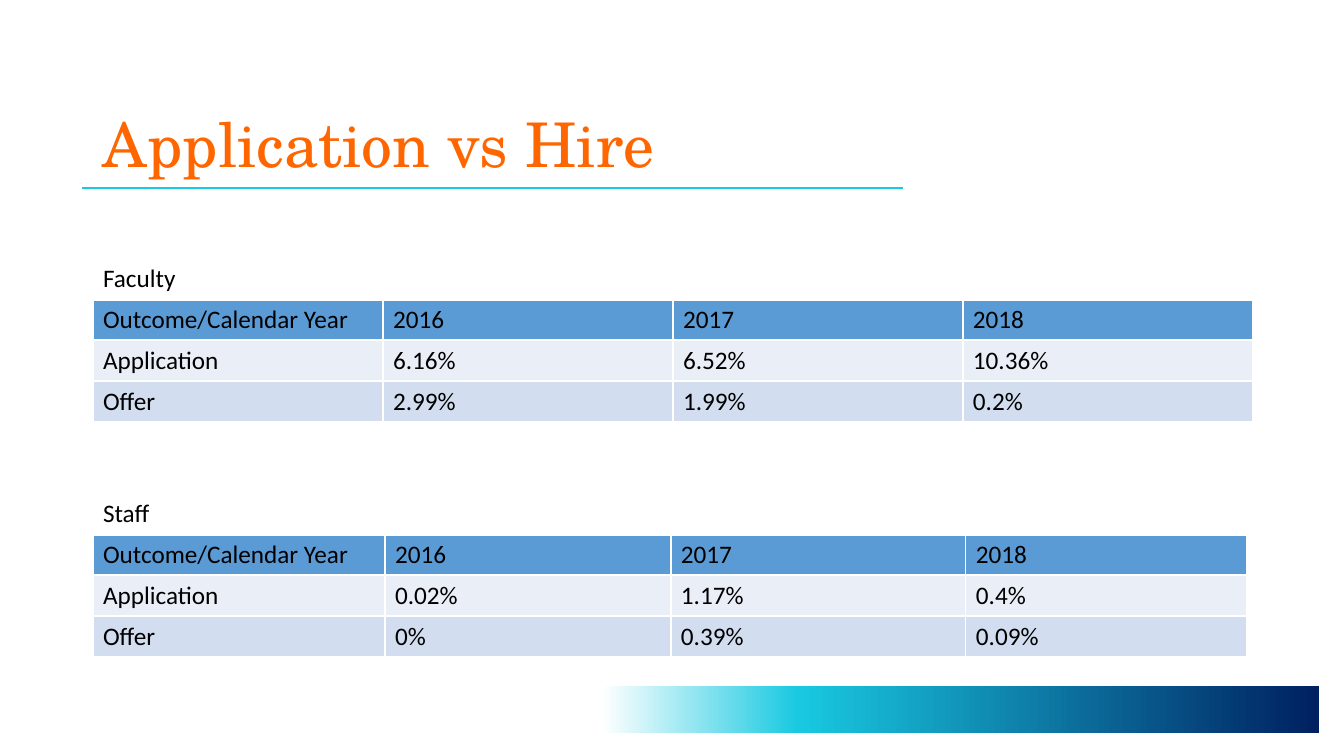
from dataclasses import dataclass

from pptx import Presentation
from pptx.dml.color import RGBColor as RGB
from pptx.enum.shapes import MSO_CONNECTOR as Conn, MSO_SHAPE as Shape
from pptx.enum.text import MSO_ANCHOR as Anchor
from pptx.oxml import parse_xml
from pptx.oxml.ns import nsdecls
from pptx.util import Pt

PX = 914400 / 100.8


def px(*sizes):
    return [round(size * PX) for size in sizes]


@dataclass(frozen=True)
class Theme:
    white: str = "FFFFFF"
    black: str = "000000"
    navy: str = "002060"
    cyan: str = "19C9E1"
    orange: str = "FF6600"
    head: str = "5B9BD5"
    light: str = "EAEFF7"
    mid: str = "D2DEEF"
    serif: str = "TeX Gyre Schola"
    sans: str = "Calibri"
    title: int = 44
    body: int = 18


class Deck:
    def __init__(self, theme):
        self.theme = theme
        self.prs = Presentation()
        self.prs.slide_width, self.prs.slide_height = px(1344, 756)
        self.slide = self.prs.slides.add_slide(self.prs.slide_layouts[6])
        self.shapes = self.slide.shapes

    def style(self, run, face, size, color):
        font = run.font
        font.name, font.size, font.bold = face, Pt(size), False
        font.color.rgb = RGB.from_string(color)

    def title(self, box, text):
        t = self.theme
        frame = self.shapes.add_textbox(*px(*box)).text_frame
        frame.word_wrap = True
        frame.vertical_anchor = Anchor.BOTTOM
        frame.text = text
        para = frame.paragraphs[0]
        para.line_spacing = 0.9
        self.style(para.runs[0], t.serif, t.title, t.orange)

    def rule(self, left, right, y):
        line = self.shapes.add_connector(Conn.STRAIGHT, *px(left, y, right, y))
        line.line.color.rgb = RGB.from_string(self.theme.cyan)
        line.line.width = Pt(2)
        line._element.spPr.append(parse_xml(f"<a:effectLst {nsdecls('a')}/>"))

    def banner(self, box):
        t = self.theme
        bar = self.shapes.add_shape(Shape.RECTANGLE, *px(*box))
        bar.shadow.inherit = False
        bar.line.fill.background()
        stops = "".join(
            f'<a:gs pos="{pos}000"><a:srgbClr val="{color}"/></a:gs>'
            for pos, color in ((0, t.navy), (72, t.cyan), (99, t.white)))
        bar._element.spPr.insert(2, parse_xml(
            f'<a:gradFill {nsdecls("a")} rotWithShape="1"><a:gsLst>{stops}</a:gsLst>'
            '<a:lin ang="10800000" scaled="0"/></a:gradFill>'))

    def cell(self, cell, text, fill, base):
        t = self.theme
        props = cell._tc.get_or_add_tcPr()
        for side, width in (("L", 1), ("R", 1), ("T", 1), ("B", base)):
            props.append(parse_xml(
                f'<a:ln{side} {nsdecls("a")} w="{Pt(width)}"><a:solidFill>'
                f'<a:srgbClr val="{t.white}"/></a:solidFill></a:ln{side}>'))
        cell.fill.solid()
        cell.fill.fore_color.rgb = RGB.from_string(fill)
        if text:
            cell.text = text
            self.style(cell.text_frame.paragraphs[0].runs[0],
                       t.sans, t.body, t.black)

    def table(self, left, top, cols, high, group, rows):
        t = self.theme
        head = ("Outcome/Calendar Year", "2016", "2017", "2018")
        data = [(group, "", "", ""), head, *rows]
        box = px(left, top, sum(cols), high * len(data))
        table = self.shapes.add_table(len(data), len(cols), *box).table
        table.first_row = table.horz_banding = False
        for col, wide in zip(table.columns, px(*cols)):
            col.width = wide
        fills = (t.white, t.head, t.light, t.mid)
        for r, (row, fill) in enumerate(zip(data, fills)):
            table.rows[r].height = px(high)[0]
            for c, text in enumerate(row):
                self.cell(table.cell(r, c), text, fill, 1 if r else 3)
        table.cell(0, 0).merge(table.cell(0, len(cols) - 1))


def main():
    deck = Deck(Theme())
    deck.title((93, 40, 1159, 146), "Application vs Hire")
    deck.rule(82, 903, 188)
    deck.banner((595, 686, 724, 47))
    deck.table(93, 258, [290] * 4, 41, "Faculty", [
        ("Application", "6.16%", "6.52%", "10.36%"),
        ("Offer", "2.99%", "1.99%", "0.2%")])
    deck.table(93, 493, [292, 286, 295, 281], 41, "Staff", [
        ("Application", "0.02%", "1.17%", "0.4%"),
        ("Offer", "0%", "0.39%", "0.09%")])
    deck.prs.save("out.pptx")


if __name__ == "__main__":
    main()
